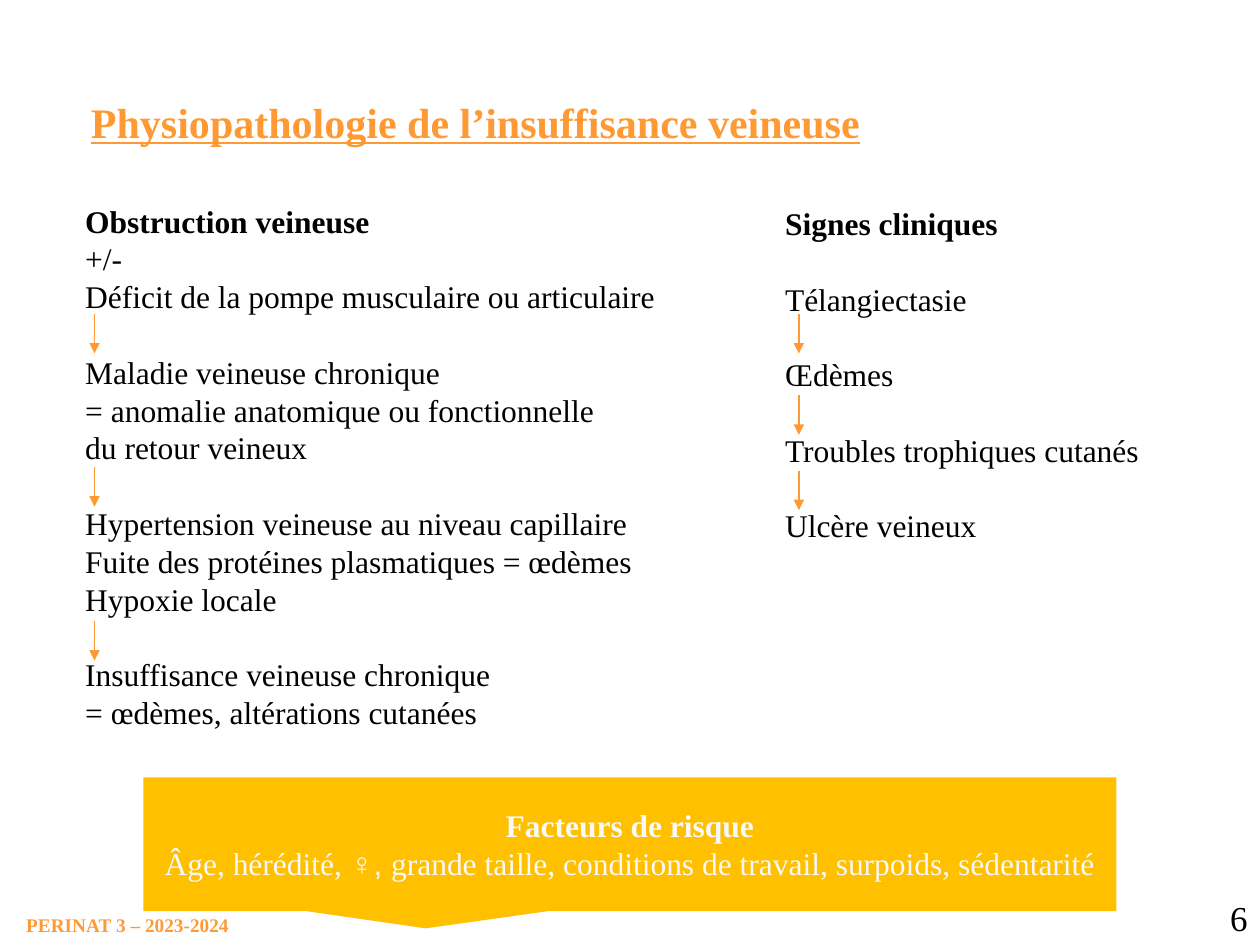
import pptx
import pptx.chart.data
import pptx.dml.color
import pptx.enum.shapes
import pptx.enum.text
import pptx.oxml.ns
import pptx.util
import lxml.etree
from dataclasses import dataclass

Pt = pptx.util.Pt
Align = pptx.enum.text.PP_ALIGN
Anchor = pptx.enum.text.MSO_ANCHOR


@dataclass
class Theme:
    font: str = "Times New Roman"
    sign: str = "Arial"
    accent: str = "FF9933"
    band: str = "FFC000"
    ink: str = "000000"
    pale: str = "F8F8F8"
    title: float = 24
    body: float = 18
    page: float = 20
    foot: float = 11
    line: float = 0.75
    gap: float = 21.6


class Deck:
    def __init__(self, theme):
        self.theme = theme
        self.file = pptx.Presentation()
        self.file.slide_width, self.file.slide_height = Pt(720), Pt(540)
        self.slide = self.file.slides.add_slide(self.file.slide_layouts[3])

    def color(self, hue):
        return pptx.dml.color.RGBColor.from_string(hue)

    def place(self, shape, box):
        shape.left, shape.top, shape.width, shape.height = map(Pt, box)

    def style(self, run, size, hue, bold=False, face=None):
        font = run.font
        font.name, font.size, font.bold = face or self.theme.font, Pt(size), bold
        font.color.rgb = self.color(hue)

    def frame(self, shape, anchor=Anchor.TOP):
        frame = shape.text_frame
        frame.word_wrap = True
        frame.auto_size = pptx.enum.text.MSO_AUTO_SIZE.NONE
        frame.vertical_anchor = anchor
        return frame

    def title(self, text, box):
        shape = self.slide.shapes.title
        self.place(shape, box)
        frame = self.frame(shape)
        frame.text = text
        para = frame.paragraphs[0]
        para.alignment, para.line_spacing = Align.LEFT, 0.9
        run = para.runs[0]
        self.style(run, self.theme.title, self.theme.accent, True)
        run.font.underline = True

    def steps(self, slot, groups, box):
        shape = self.slide.placeholders[slot]
        self.place(shape, box)
        frame = self.frame(shape)
        frame.text = "\n".join(line for group in groups for line in group)
        heads = {group[0] for group in groups[1:]}
        for rank, para in enumerate(frame.paragraphs):
            props = para._p.get_or_add_pPr()
            props.set("marL", "0")
            props.set("indent", "0")
            lxml.etree.SubElement(props, pptx.oxml.ns.qn("a:buNone"))
            para.space_before = Pt(self.theme.gap if para.text in heads else 0)
            self.style(para.runs[0], self.theme.body, self.theme.ink, rank == 0)

    def label(self, text, box, size, hue, bold=False, align=Align.LEFT, inset=0):
        frame = self.frame(self.slide.shapes.add_textbox(*map(Pt, box)))
        frame.margin_left = frame.margin_right = Pt(2 * inset)
        frame.margin_top = frame.margin_bottom = Pt(inset)
        frame.text = text
        frame.paragraphs[0].alignment = align
        self.style(frame.paragraphs[0].runs[0], size, hue, bold)

    def arrow(self, x, y, size=22.5):
        kind = pptx.enum.shapes.MSO_CONNECTOR.STRAIGHT
        link = self.slide.shapes.add_connector(kind, Pt(x), Pt(y), Pt(x), Pt(y + size))
        link.line.color.rgb = self.color(self.theme.accent)
        link.line.width = Pt(self.theme.line)
        qn = pptx.oxml.ns.qn
        lxml.etree.SubElement(link.line._get_or_add_ln(), qn("a:tailEnd"), type="triangle")
        lxml.etree.SubElement(link._element.spPr, qn("a:effectLst"))

    def callout(self, head, parts, box):
        kind = pptx.enum.shapes.MSO_SHAPE.RECTANGULAR_CALLOUT
        shape = self.slide.shapes.add_shape(kind, *map(Pt, box))
        shape.adjustments[0], shape.adjustments[1] = -0.21, 0.63
        shape.shadow.inherit = False
        shape.fill.solid()
        shape.fill.fore_color.rgb = self.color(self.theme.band)
        shape.line.fill.background()
        frame = self.frame(shape, Anchor.MIDDLE)
        frame.text = head
        para = frame.paragraphs[0]
        para.alignment = Align.CENTER
        self.style(para.runs[0], self.theme.body, self.theme.pale, True)
        para = frame.add_paragraph()
        para.alignment = Align.CENTER
        for text, face in parts:
            run = para.add_run()
            run.text = text
            self.style(run, self.theme.body, self.theme.pale, face=face)


def main():
    theme = Theme()
    deck = Deck(theme)
    deck.label("PERINAT 3 – 2023-2024", (15, 522, 130, 14), theme.foot, theme.accent, True)
    deck.label("6", (660, 509, 60, 31), theme.page, theme.ink, align=Align.RIGHT, inset=3.6)
    deck.title("Physiopathologie de l’insuffisance veineuse", (44.8, 54.7, 480, 34))
    deck.steps(1, [
        ["Obstruction veineuse", "+/-", "Déficit de la pompe musculaire ou articulaire"],
        ["Maladie veineuse chronique", "= anomalie anatomique ou fonctionnelle",
         "du retour veineux"],
        ["Hypertension veineuse au niveau capillaire",
         "Fuite des protéines plasmatiques = œdèmes", "Hypoxie locale"],
        ["Insuffisance veineuse chronique", "= œdèmes, altérations cutanées"],
    ], (41.5, 111.6, 355, 312.5))
    deck.steps(2, [
        ["Signes cliniques"], ["Télangiectasie"], ["Œdèmes"],
        ["Troubles trophiques cutanés"], ["Ulcère veineux"],
    ], (441.4, 113, 230, 204))
    for x, tops in ((54, (179.5, 267, 355)), (456.5, (179.5, 226, 269))):
        for y in tops:
            deck.arrow(x, y)
    deck.callout("Facteurs de risque", [
        ("Âge, hérédité, ", theme.font), ("♀, ", theme.sign),
        ("grande taille, conditions de travail, surpoids, sédentarité", theme.font),
    ], (82, 444.3, 556, 76.3))
    deck.file.save("out.pptx")


if __name__ == "__main__":
    main()
